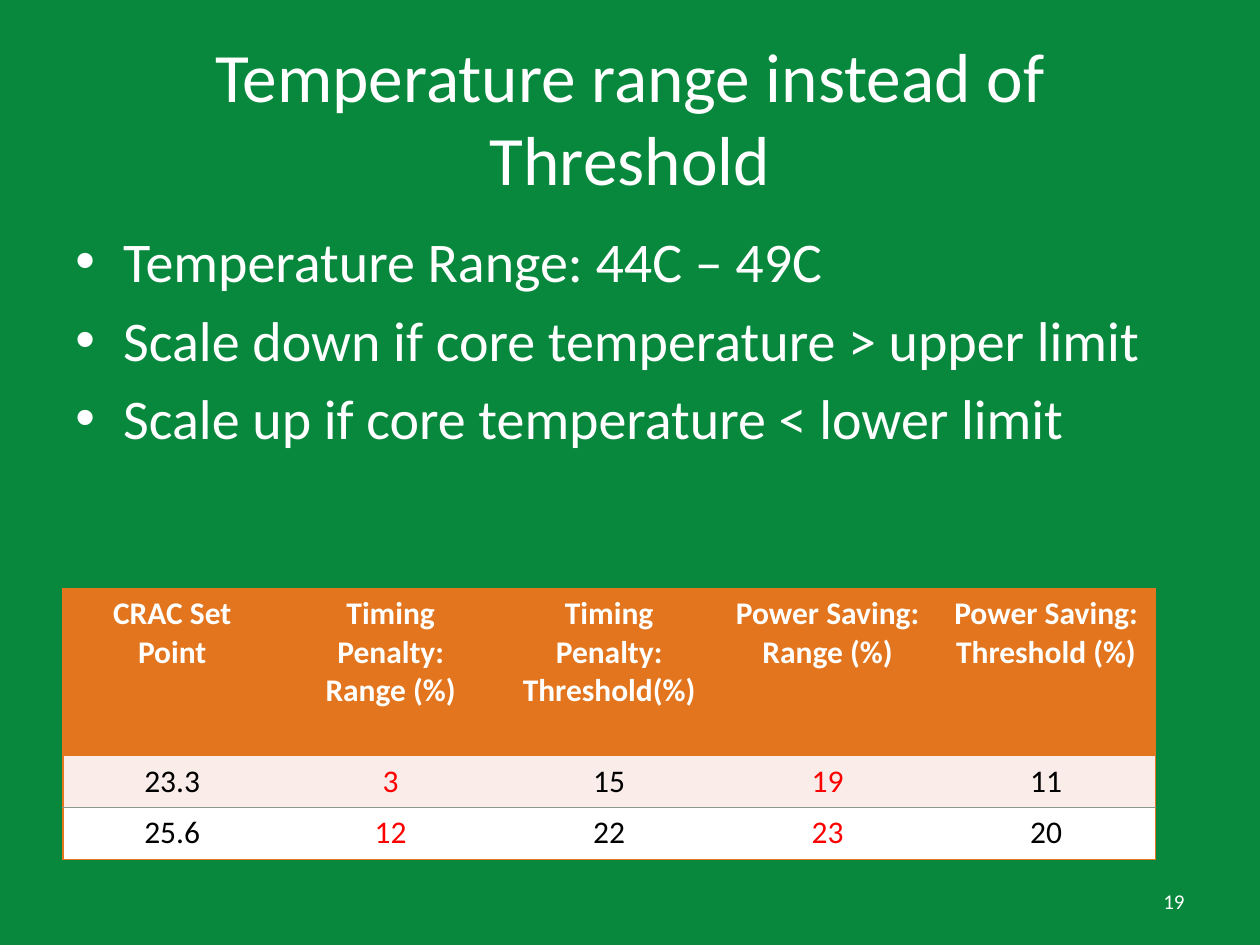
from lxml import etree
from pptx import Presentation
from pptx.dml.color import RGBColor
from pptx.enum.text import MSO_ANCHOR, PP_ALIGN
from pptx.oxml.ns import qn
from pptx.util import Inches, Pt

LEFT, CENTER, RIGHT = PP_ALIGN.LEFT, PP_ALIGN.CENTER, PP_ALIGN.RIGHT
TOP, MIDDLE = MSO_ANCHOR.TOP, MSO_ANCHOR.MIDDLE
FONT = "Calibri"
NO_TABLE_STYLE = "{2D5ABB26-0587-4C30-8999-92F81FD0307C}"
COLORS = {
    "green": "08883D",
    "white": "FFFFFF",
    "black": "000000",
    "red": "FF0000",
    "orange": "E2751D",
    "blush": "FAECE8",
    "divider": "8A9A8A",
}
BULLETS = [
    "Temperature Range: 44C – 49C",
    "Scale down if core temperature > upper limit",
    "Scale up if core temperature < lower limit",
]
RESULTS = [
    ["CRAC Set Point", "Timing Penalty: Range (%)", "Timing Penalty: Threshold(%)",
     "Power Saving: Range (%)", "Power Saving: Threshold (%)"],
    ["23.3", "3", "15", "19", "11"],
    ["25.6", "12", "22", "23", "20"],
]
ROW_HEIGHTS = [1.33, 0.41, 0.41]
ROW_FILLS = ["orange", "blush", "white"]
RANGE_COLUMNS = (1, 3)


def rgb(name):
    """Return the named colour."""
    return RGBColor.from_string(COLORS[name])


def write(paragraph, text, size, color="white", align=LEFT, bold=False):
    """Add one styled run to an aligned paragraph."""
    paragraph.alignment = align
    run = paragraph.add_run()
    run.text = text
    run.font.name = FONT
    run.font.size = Pt(size)
    run.font.bold = bold
    run.font.color.rgb = rgb(color)


def add_frame(slide, box, anchor):
    """Add a wrapping text box and return its text frame."""
    frame = slide.shapes.add_textbox(*map(Inches, box)).text_frame
    frame.word_wrap = True
    frame.vertical_anchor = anchor
    return frame


def add_line_of_text(slide, box, text, size, align):
    """Add a vertically centred text box with one paragraph."""
    write(add_frame(slide, box, MIDDLE).paragraphs[0], text, size, align=align)


def add_bullets(slide, box, items):
    """Add the bulleted list with hanging indents."""
    frame = add_frame(slide, box, TOP)
    for index, item in enumerate(items):
        paragraph = frame.add_paragraph() if index else frame.paragraphs[0]
        write(paragraph, item, 32)
        paragraph.space_before = Pt(6.4)
        properties = paragraph._p.get_or_add_pPr()
        properties.set("marL", str(Inches(0.38)))
        properties.set("indent", str(Inches(-0.38)))
        etree.SubElement(properties, qn("a:buFont"), typeface="Arial")
        etree.SubElement(properties, qn("a:buChar"), char="•")


def add_border(cell, side, color, width):
    """Draw one side of a cell border."""
    line = etree.SubElement(cell._tc.get_or_add_tcPr(), qn(f"a:ln{side}"),
                            w=str(Pt(width)))
    fill = etree.SubElement(line, qn("a:solidFill"))
    etree.SubElement(fill, qn("a:srgbClr"), val=COLORS[color])


def style_cell(cell, row, column, last_row, last_column):
    """Draw the borders of a cell by its place, then fill it."""
    if column == 0:
        add_border(cell, "L", "orange", 1)
    if column == last_column:
        add_border(cell, "R", "orange", 1)
    if row == 0:
        add_border(cell, "T", "orange", 1)
    elif row == last_row:
        add_border(cell, "T", "divider", 0.5)
        add_border(cell, "B", "orange", 1)
    else:
        add_border(cell, "B", "divider", 0.5)
    cell.fill.solid()
    cell.fill.fore_color.rgb = rgb(ROW_FILLS[row])


def add_results(slide, box, rows):
    """Add the table comparing range and threshold results."""
    last_row, last_column = len(rows) - 1, len(rows[0]) - 1
    table = slide.shapes.add_table(len(rows), len(rows[0]), *map(Inches, box)).table
    table._tbl.tblPr.find(qn("a:tableStyleId")).text = NO_TABLE_STYLE
    table.horz_banding = False
    for row, values in enumerate(rows):
        table.rows[row].height = Inches(ROW_HEIGHTS[row])
        for column, value in enumerate(values):
            cell = table.cell(row, column)
            style_cell(cell, row, column, last_row, last_column)
            body_color = "red" if column in RANGE_COLUMNS else "black"
            write(cell.text_frame.paragraphs[0], value, 18,
                  body_color if row else "white", CENTER, bold=row == 0)


def main():
    """Build and save the slide."""
    deck = Presentation()
    deck.slide_width, deck.slide_height = Inches(10), Inches(7.5)
    slide = deck.slides.add_slide(deck.slide_layouts[6])
    slide.background.fill.solid()
    slide.background.fill.fore_color.rgb = rgb("green")
    add_line_of_text(slide, (0.5, 0.3, 9, 1.25),
                     "Temperature range instead of Threshold", 39.6, CENTER)
    add_bullets(slide, (0.5, 1.75, 9, 4.95), BULLETS)
    add_results(slide, (0.5, 4.67, 8.67, sum(ROW_HEIGHTS)), RESULTS)
    add_line_of_text(slide, (7.17, 6.95, 2.33, 0.4), "19", 12, RIGHT)
    deck.save("out.pptx")


if __name__ == "__main__":
    main()
